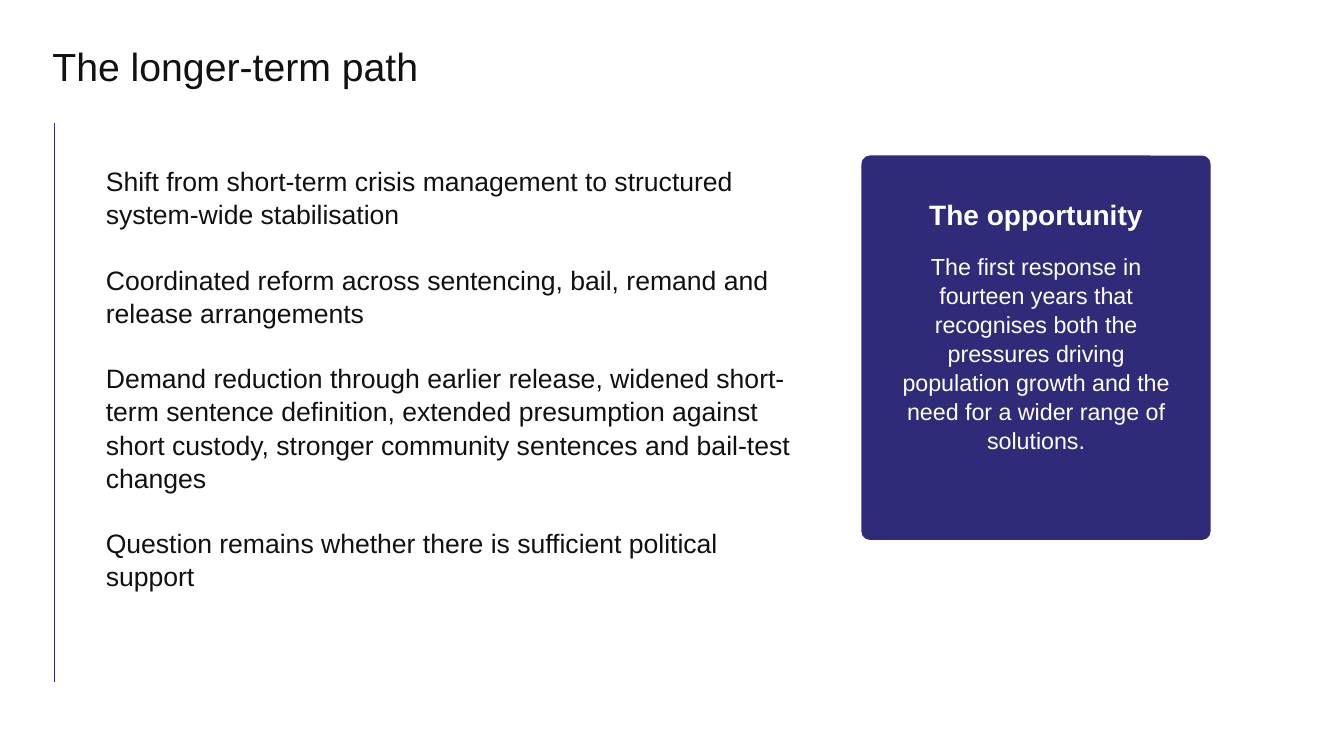
from pptx import Presentation
from pptx import util as u
from pptx.dml.color import RGBColor
from pptx.enum import shapes, text
from pptx.oxml.ns import qn
from lxml import etree

PX = 9144  # 100 px to the inch
INK, INDIGO, WHITE = "111111", "302B79", "FFFFFF"

PATH_STEPS = [
    "Shift from short-term crisis management to structured system-wide stabilisation",
    "Coordinated reform across sentencing, bail, remand and release arrangements",
    "Demand reduction through earlier release, widened short-term sentence definition, "
    "extended presumption against short custody, stronger community sentences "
    "and bail-test changes",
    "Question remains whether there is sufficient political support",
]
OPPORTUNITY = (
    "The first response in fourteen years that recognises both the pressures driving "
    "population growth and the need for a wider range of solutions."
)


def px(*lengths):
    return [u.Emu(length * PX) for length in lengths]


def colour(value):
    return RGBColor.from_string(value)


def add_text(page, place, lines, size, ink=INK, bold=False,
             align=text.PP_ALIGN.LEFT, spacing=1.0, gap=0):
    """Add a wrapped, vertically centred text box, one paragraph per line."""
    frame = page.shapes.add_textbox(*px(*place)).text_frame
    frame.word_wrap = True
    frame.vertical_anchor = text.MSO_ANCHOR.MIDDLE
    frame.margin_left = frame.margin_right = frame.margin_top = frame.margin_bottom = 0
    for index, line in enumerate(lines):
        para = frame.paragraphs[0] if index == 0 else frame.add_paragraph()
        para.text = line
        para.alignment = align
        para.line_spacing = spacing
        para.space_before = u.Pt(gap if index else 0)
        para.font.name = "Arial"
        para.font.size = u.Pt(size)
        para.font.bold = bold
        para.font.color.rgb = colour(ink)


def add_rule(page, start, end):
    rule = page.shapes.add_connector(
        shapes.MSO_CONNECTOR.STRAIGHT, *px(*start, *end))
    rule.line.color.rgb = colour(INDIGO)
    rule.line.width = u.Pt(1.2)
    etree.SubElement(rule._element.spPr, qn("a:effectLst"))


def add_card(page, place):
    card = page.shapes.add_shape(
        shapes.MSO_SHAPE.ROUNDED_RECTANGLE, *px(*place))
    card.adjustments[0] = 0.023
    card.shadow.inherit = False
    card.fill.solid()
    card.fill.fore_color.rgb = colour(INDIGO)
    card.line.color.rgb = colour(INDIGO)
    card.line.width = u.Pt(1)


def main():
    deck = Presentation()
    deck.slide_width, deck.slide_height = px(1333, 750)
    page = deck.slides.add_slide(deck.slide_layouts[6])

    add_text(page, (52, 38, 1190, 55), ["The longer-term path"], 28)
    add_rule(page, (54, 122), (54, 677))
    add_text(page, (105, 145, 700, 460), PATH_STEPS, 19, spacing=1.04, gap=23)

    add_card(page, (855, 155, 345, 380))
    centre = text.PP_ALIGN.CENTER
    add_text(page, (885, 195, 285, 35), ["The opportunity"], 20, WHITE,
             bold=True, align=centre)
    add_text(page, (885, 255, 285, 190), [OPPORTUNITY], 16.6, WHITE,
             align=centre, spacing=1.04)

    deck.save("out.pptx")


if __name__ == "__main__":
    main()
